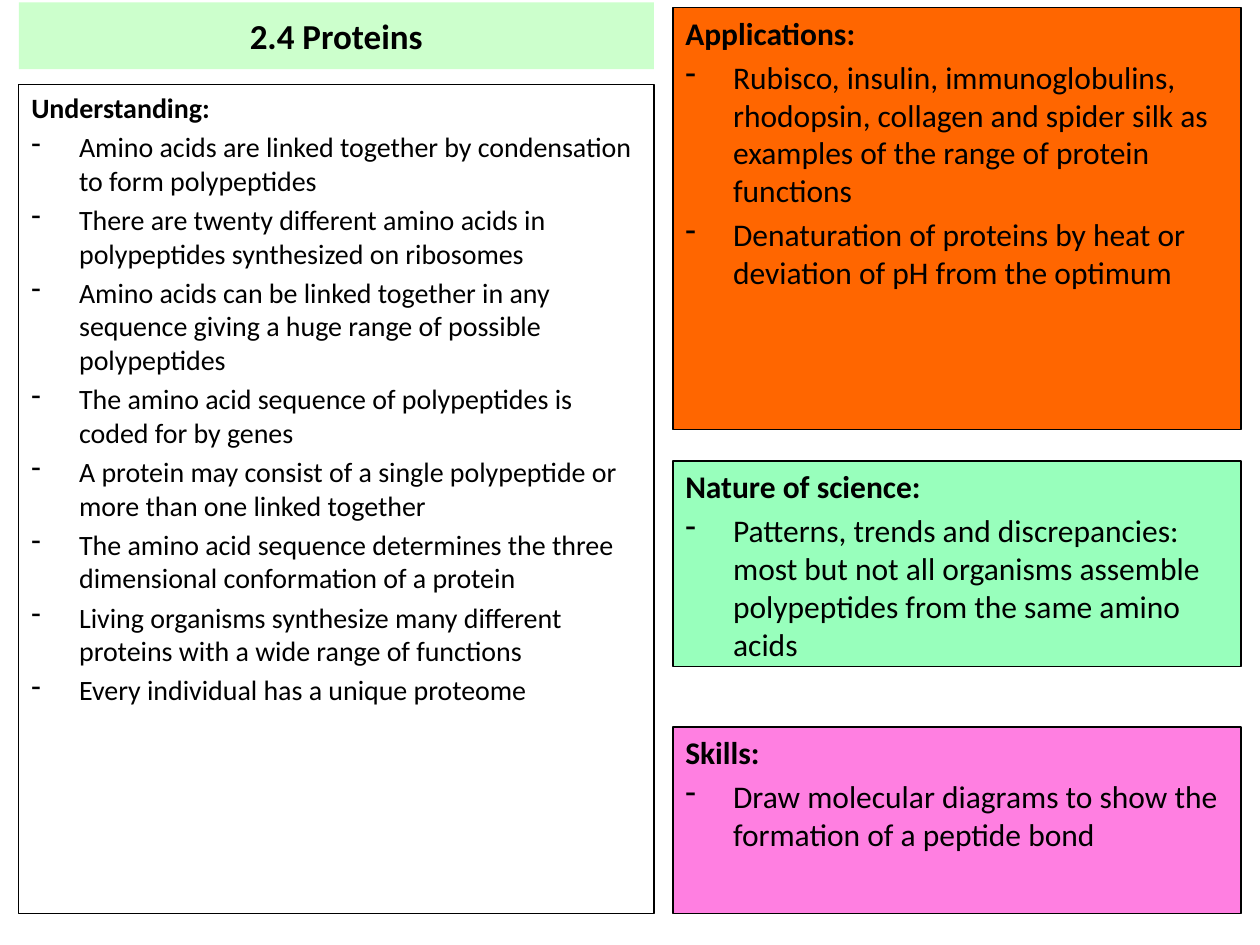
from lxml.etree import SubElement
from pptx import Presentation
from pptx.dml.color import RGBColor
from pptx.enum.shapes import MSO_SHAPE
from pptx.enum.text import MSO_ANCHOR, PP_ALIGN
from pptx.oxml.ns import qn
from pptx.util import Inches, Pt

BLACK = "000000"
LEFT_COLUMN = (0.15, 5.04)
RIGHT_COLUMN = (5.34, 4.51)
INDENT = Inches(0.38)

# column, top, height, fill, text size, heading, points
PANELS = [
    (LEFT_COLUMN, 0.67, 6.58, None, 16, "Understanding:", [
        "Amino acids are linked together by condensation to form polypeptides",
        "There are twenty different amino acids in polypeptides synthesized on ribosomes",
        "Amino acids can be linked together in any sequence giving a huge range of possible polypeptides",
        "The amino acid sequence of polypeptides is coded for by genes",
        "A protein may consist of a single polypeptide or more than one linked together",
        "The amino acid sequence determines the three dimensional conformation of a protein",
        "Living organisms synthesize many different proteins with a wide range of functions",
        "Every individual has a unique proteome",
    ]),
    (RIGHT_COLUMN, 0.06, 3.35, "FF6600", 18, "Applications:", [
        "Rubisco, insulin, immunoglobulins, rhodopsin, collagen and spider silk "
        "as examples of the range of protein functions",
        "Denaturation of proteins by heat or deviation of pH from the optimum",
    ]),
    (RIGHT_COLUMN, 5.77, 1.48, "FF7FE1", 18, "Skills:", [
        "Draw molecular diagrams to show the formation of a peptide bond",
    ]),
    (RIGHT_COLUMN, 3.66, 1.63, "98FFBC", 18, "Nature of science:", [
        "Patterns, trends and discrepancies: most but not all organisms assemble "
        "polypeptides from the same amino acids",
    ]),
]

presentation = Presentation()
presentation.slide_width = Inches(10)
presentation.slide_height = Inches(7.5)
slide = presentation.slides.add_slide(presentation.slide_layouts[6])


def add_box(column, top, height, fill=None, line=None, anchor=MSO_ANCHOR.TOP):
    left, width = column
    shape = slide.shapes.add_shape(
        MSO_SHAPE.RECTANGLE, Inches(left), Inches(top), Inches(width), Inches(height))
    shape.shadow.inherit = False
    if fill:
        shape.fill.solid()
        shape.fill.fore_color.rgb = RGBColor.from_string(fill)
    else:
        shape.fill.background()
    if line:
        shape.line.color.rgb = RGBColor.from_string(line)
        shape.line.width = Pt(0.75)
    else:
        shape.line.fill.background()
    shape.text_frame.word_wrap = True
    shape.text_frame.vertical_anchor = anchor
    return shape.text_frame


def write(paragraph, text, size, bold=False, align=PP_ALIGN.LEFT, before=0, bullet=None):
    paragraph.alignment = align
    paragraph.space_before = Pt(before)
    run = paragraph.add_run()
    run.text = text
    run.font.name = "Calibri"
    run.font.size = Pt(size)
    run.font.bold = bold
    run.font.color.rgb = RGBColor.from_string(BLACK)
    if bullet:
        properties = paragraph._p.get_or_add_pPr()
        properties.set("marL", str(INDENT))
        properties.set("indent", str(-INDENT))
        SubElement(properties, qn("a:buChar"), char=bullet)


title = add_box(LEFT_COLUMN, 0.02, 0.53, fill="CCFFCC", anchor=MSO_ANCHOR.MIDDLE)
write(title.paragraphs[0], "2.4 Proteins", 20, bold=True, align=PP_ALIGN.CENTER)

for column, top, height, fill, size, heading, points in PANELS:
    panel = add_box(column, top, height, fill=fill, line=BLACK)
    gap = size * 0.2
    write(panel.paragraphs[0], heading, size, bold=True, before=gap)
    for point in points:
        write(panel.add_paragraph(), point, size, before=gap, bullet="-")

presentation.save("out.pptx")
